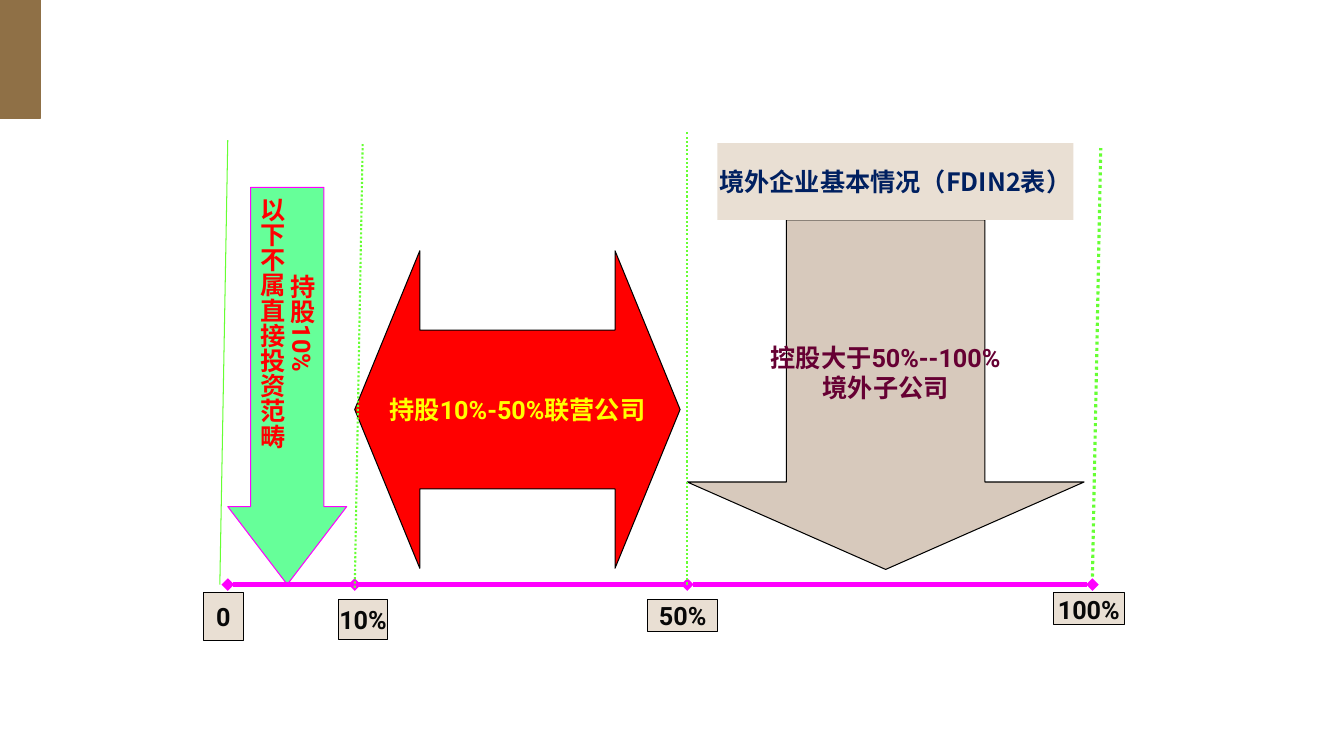
import pptx
import pptx.util
import pptx.dml.color
import pptx.enum.dml
import pptx.enum.shapes
import pptx.enum.text
import pptx.oxml.ns
from lxml import etree

Cm, Pt = pptx.util.Cm, pptx.util.Pt
MSO = pptx.enum.shapes.MSO_SHAPE
DOT = pptx.enum.dml.MSO_LINE.ROUND_DOT
RGB = pptx.dml.color.RGBColor.from_string
qn = pptx.oxml.ns.qn

THEME = {
    "brown": "8F7046", "mint": "66FF99", "magenta": "FF00FF", "red": "FF0000",
    "yellow": "FFFF00", "taupe": "D7C9BC", "plum": "660033", "beige": "E9DFD3",
    "navy": "002060", "ink": "080808", "black": "000000", "green": "66FF33",
    "size": 18, "latin": "Roboto", "cjk": "Noto Sans CJK SC",
}


def add_block(kind, box, fill, line=None, lines=(), color="ink", latin="latin", adj=()):
    """Add a filled preset shape with one centred bold paragraph per text line."""
    sp = s.shapes.add_shape(kind, *[Cm(v) for v in box])
    sp.shadow.inherit = False
    for i, value in enumerate(adj):
        sp.adjustments[i] = value
    sp.fill.solid()
    sp.fill.fore_color.rgb = RGB(THEME[fill])
    if line:
        sp.line.color.rgb = RGB(THEME[line])
        sp.line.width = Pt(0.75)
    else:
        sp.line.fill.background()
    tf = sp.text_frame
    tf.word_wrap = False
    tf.vertical_anchor = pptx.enum.text.MSO_ANCHOR.MIDDLE
    for i, text in enumerate(lines):
        p = tf.add_paragraph() if i else tf.paragraphs[0]
        p.alignment = pptx.enum.text.PP_ALIGN.CENTER
        r = p.add_run()
        r.text = text
        r.font.color.rgb = RGB(THEME[color])
        font = {"size": Pt(THEME["size"]), "bold": True, "name": THEME[latin]}
        for name, value in font.items():
            setattr(r.font, name, value)
        etree.SubElement(r.font._element, qn("a:ea"), typeface=THEME["cjk"])
    return sp


def add_line(x1, y1, x2, y2, color, width, dash=None, diamonds=False):
    cx = s.shapes.add_connector(pptx.enum.shapes.MSO_CONNECTOR.STRAIGHT,
                                *[Cm(v) for v in (x1, y1, x2, y2)])
    cx.line.color.rgb = RGB(THEME[color])
    cx.line.width = Pt(width)
    if dash:
        cx.line.dash_style = dash
    if diamonds:
        for end in ("a:headEnd", "a:tailEnd"):
            etree.SubElement(cx.line._get_or_add_ln(), qn(end), type="diamond")
    etree.SubElement(cx._element.spPr, qn("a:effectLst"))


prs = pptx.Presentation()
prs.slide_width, prs.slide_height = Cm(33.87), Cm(19.05)
s = prs.slides.add_slide(prs.slide_layouts[6])

add_block(MSO.RECTANGLE, (-0.03, 0, 1.04, 3), "brown", "brown")

# Arrows for the three ranges of shareholding
below_10 = add_block(MSO.DOWN_ARROW, (5.74, 4.72, 3, 10.01), "mint", "magenta",
                     ["持股10%", "以下不属直接投资范畴"], "red", adj=(0.615, 0.655))
below_10.text_frame._txBody.bodyPr.set("vert", "eaVert")
add_block(MSO.LEFT_RIGHT_ARROW, (8.94, 6.32, 8.2, 8), "red", "black",
          ["持股10%-50%联营公司"], "yellow", adj=(0.5, 0.205))
add_block(MSO.DOWN_ARROW, (17.32, 5.54, 10, 8.81), "taupe", "black",
          ["控股大于50%--100%", "境外子公司"], "plum", adj=(0.5, 0.25))

# Percentage axis
AXIS_Y = 14.73
for x1, x2, diamonds in [(5.74, 8.94, True), (8.53, 17.32, False), (17.32, 27.53, True)]:
    add_line(x1, AXIS_Y, x2, AXIS_Y, "magenta", 3, diamonds=diamonds)

for label, box in [
    ("0", (5.13, 14.94, 1, 1.19)),
    ("10%", (8.53, 15.11, 1.24, 1)),
    ("50%", (16.33, 15.11, 1.75, 0.81)),
    ("100%", (26.54, 14.94, 1.8, 0.81)),
]:
    add_block(MSO.RECTANGLE, box, "beige", "black", [label])

# Boundaries rising from the axis
for x1, y1, x2, y2, width, dash in [
    (8.94, 14.81, 9.14, 3.61, 1.5, DOT),
    (17.32, AXIS_Y, 17.32, 3.33, 1.5, DOT),
    (27.53, 14.53, 27.74, 3.73, 2.25, DOT),
    (5.54, AXIS_Y, 5.74, 3.53, 0.75, None),
]:
    add_line(x1, y1, x2, y2, "green", width, dash)

add_block(MSO.RECTANGLE, (18.08, 3.61, 8.97, 1.93), "beige",
          lines=["境外企业基本情况（FDIN2表）"], color="navy", latin="cjk")

prs.save("out.pptx")
